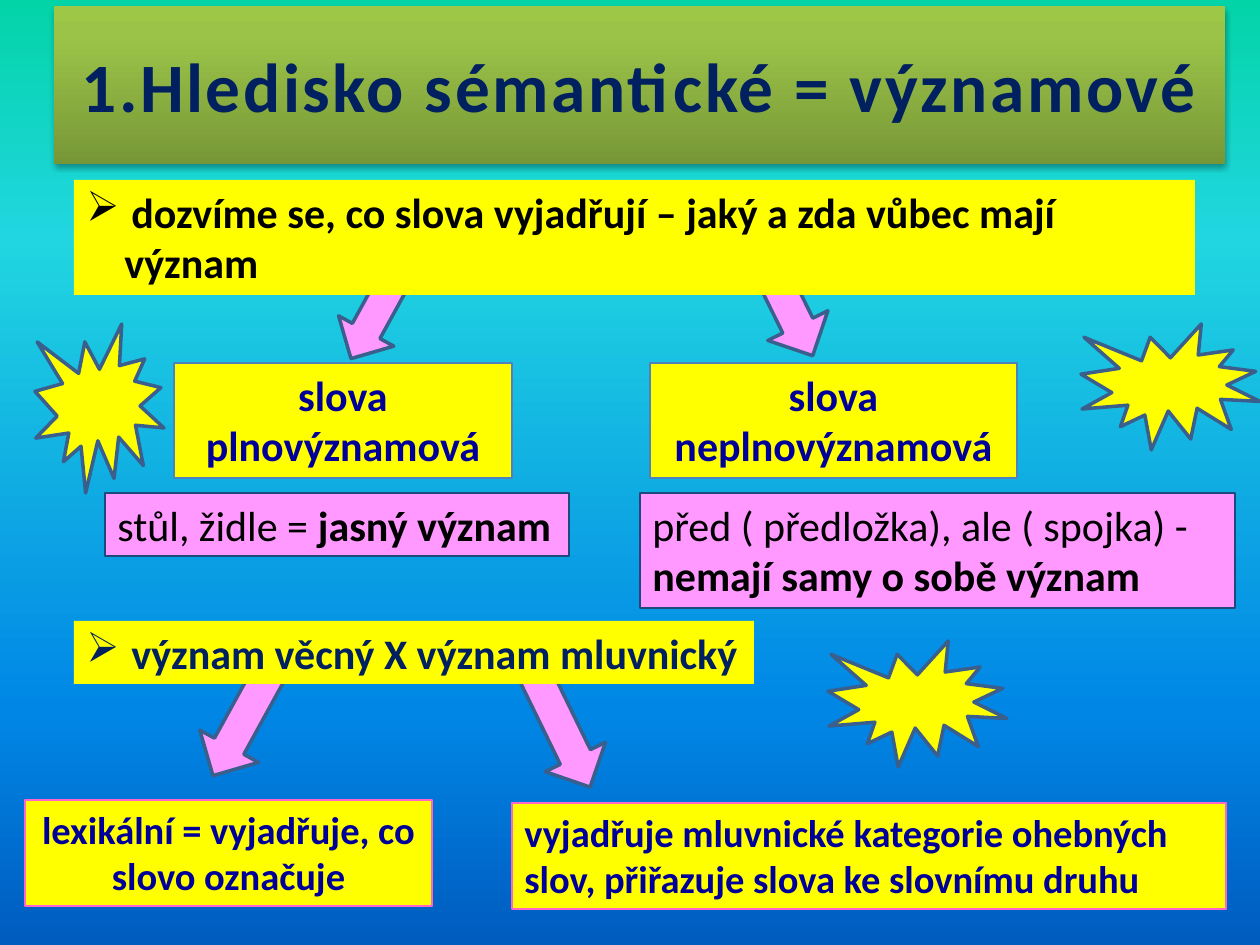
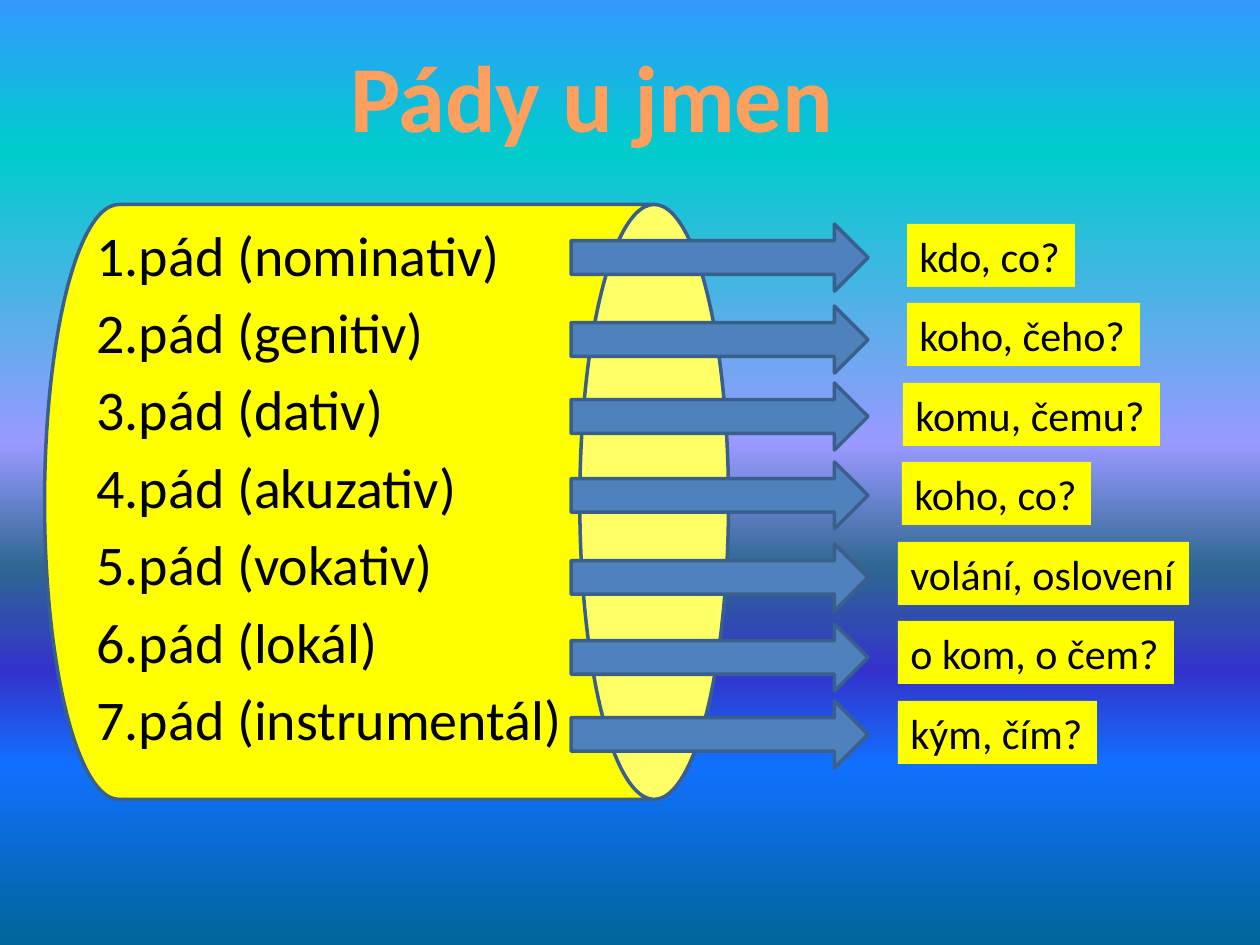
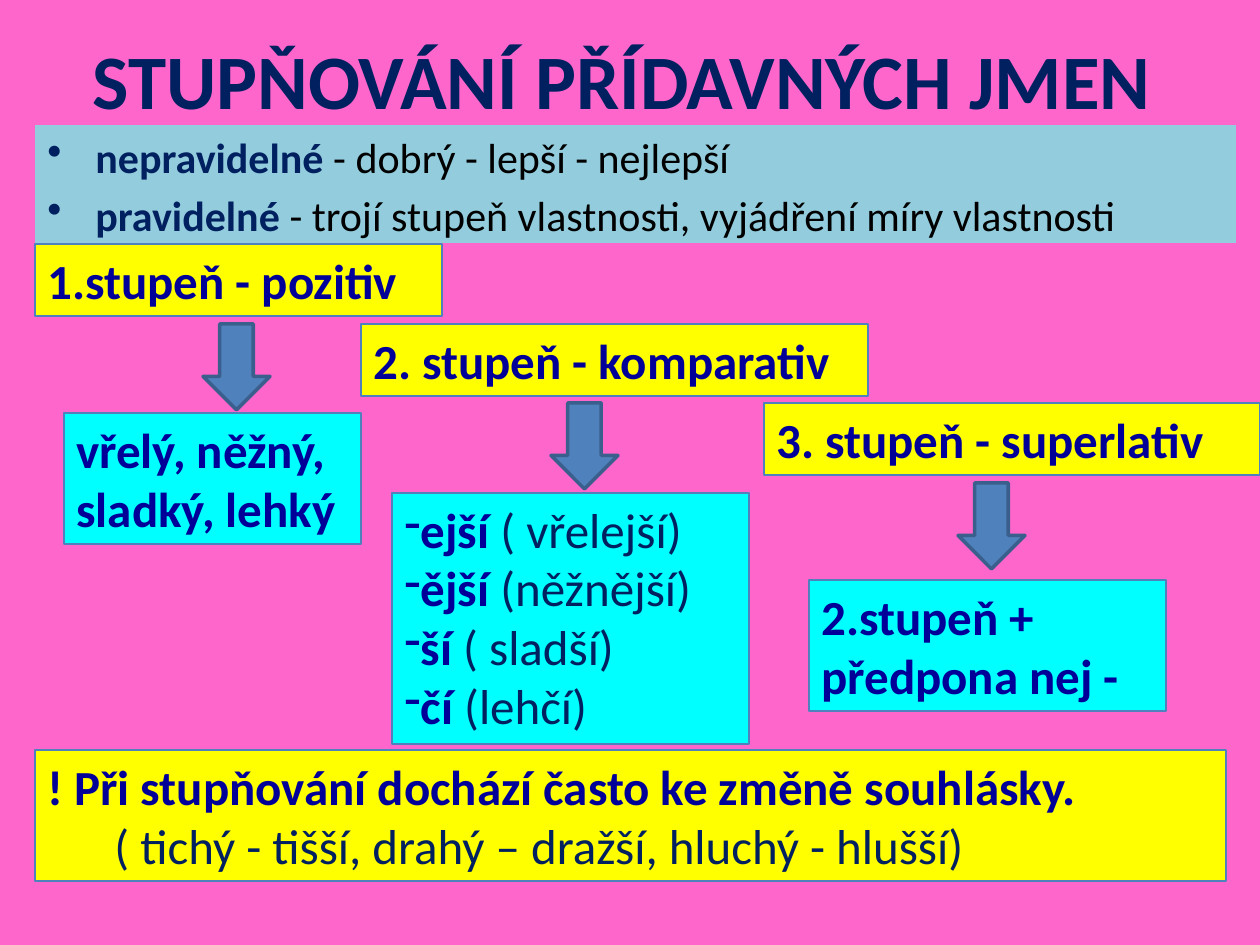
"""Build three slides on Czech word classes, cases and comparison of adjectives."""
from lxml import etree
from pptx import Presentation, util as u
from pptx.dml.color import RGBColor
from pptx.enum import shapes, text
from pptx.oxml.ns import qn

PX = u.Inches(1) / 126
YELLOW = RGBColor(0xFF, 0xFF, 0x00)
PINK = RGBColor(0xFF, 0x99, 0xFF)
HOT_PINK = RGBColor(0xFF, 0x66, 0xCC)
CYAN = RGBColor(0x00, 0xFF, 0xFF)
PALE_BLUE = RGBColor(0x93, 0xCD, 0xDD)
BLUE = RGBColor(0x4F, 0x81, 0xBD)
OUTLINE = RGBColor(0x3A, 0x5F, 0x8C)
SLATE = RGBColor(0x1F, 0x49, 0x7D)
NAVY = RGBColor(0x00, 0x20, 0x60)
INK = RGBColor(0x00, 0x00, 0x99)
BLACK = RGBColor(0x00, 0x00, 0x00)

SEA = [(0, "03D4A8"), (25, "21D6E0"), (75, "0087E6"), (100, "005CBF")]
DUSK = [(0, "3399FF"), (16, "00CCCC"), (47, "9999FF"), (60, "2E6792"),
        (71, "3333CC"), (81, "1170FF"), (100, "006699")]
OLIVE = [(0, "779737"), (80, "9BC348"), (100, "9DC746")]
ORANGE = [(0, "FFA367"), (25, "FF9F5D"), (50, "F38E3A"), (75, "FF9F5D"), (100, "FFA367")]

SHAPE = shapes.MSO_SHAPE
CENTER = text.PP_ALIGN.CENTER


def sub(parent, tag, **attrs):
    return etree.SubElement(parent, qn(tag), {k: str(v) for k, v in attrs.items()})


def paint(fill, color, element, angle=270):
    if isinstance(color, RGBColor):
        fill.solid()
        fill.fore_color.rgb = color
        return
    fill.gradient()
    fill.gradient_angle = angle
    stops = element.find(".//" + qn("a:gsLst"))
    for stop in list(stops):
        stops.remove(stop)
    for pos, rgb in color:
        sub(sub(stops, "a:gs", pos=pos * 1000), "a:srgbClr", val=rgb)


def write(tf, words, size=24, color=BLACK, bold=False, spacing=None, new=True,
          align=None, bullet=None, left=0, hang=0, before=0):
    p = tf.paragraphs[-1]
    if new:
        if p.runs:
            p = tf.add_paragraph()
        if align is not None:
            p.alignment = align
        if before:
            p.space_before = u.Pt(before)
        pPr = p._p.get_or_add_pPr()
        pPr.set("marL", str(round(left * PX)))
        pPr.set("indent", str(round(-hang * PX)))
        if bullet:
            sub(pPr, "a:buChar", char=bullet)
    r = p.add_run()
    r.text = words
    r.font.name, r.font.size, r.font.bold = "Calibri", u.Pt(size), bold
    paint(r.font.fill, color, r._r)
    if spacing:
        r._r.get_or_add_rPr().set("spc", str(round(spacing * 100)))


class Deck:
    """Hold the presentation, its scale and the current slide."""

    def __init__(self, width, height):
        self.prs = Presentation()
        self.prs.slide_width, self.prs.slide_height = self.emu(width, height)

    def emu(self, *lengths):
        return [u.Emu(round(n * PX)) for n in lengths]

    def slide(self, background):
        self.s = self.prs.slides.add_slide(self.prs.slide_layouts[6])
        paint(self.s.background.fill, background, self.s.element)

    def shape(self, kind, x, y, w, h, fill=YELLOW, turn=0):
        sp = self.s.shapes.add_shape(kind, *self.emu(x, y, w, h))
        sp.shadow.inherit = False
        sp.rotation = turn
        paint(sp.fill, fill, sp.element)
        sp.line.color.rgb, sp.line.width = OUTLINE, u.Pt(2)

    def frame(self, x, y, w, h, fill=None, line=None, wrap=True, grow=True):
        sp = self.s.shapes.add_textbox(*self.emu(x, y, w, h))
        tf = sp.text_frame
        tf.word_wrap = wrap
        tf.auto_size = text.MSO_AUTO_SIZE.SHAPE_TO_FIT_TEXT if grow else text.MSO_AUTO_SIZE.NONE
        if fill:
            paint(sp.fill, fill, sp.element, 90)
        if line:
            sp.line.color.rgb, sp.line.width = line, u.Pt(0.75)
        return sp

    def box(self, *place, **style):
        return self.frame(*place, **style).text_frame

    def title(self, words, x, y, w=1134, fill=None, **style):
        sp = self.frame(x, y, w, 158, fill, grow=False)
        sp.text_frame.vertical_anchor = text.MSO_ANCHOR.MIDDLE
        write(sp.text_frame, words, bold=True, align=CENTER, **style)
        if fill:
            effects = sub(sp.element.spPr, "a:effectLst")
            shadow = sub(effects, "a:outerShdw", blurRad=u.Pt(3.1), dist=u.Pt(1.8),
                         dir=5400000, rotWithShape=0)
            sub(sub(shadow, "a:srgbClr", val="000000"), "a:alpha", val=35000)


def meaning_slide(deck):
    deck.slide(SEA)
    for x, y, w, h, turn in [(527, 659, 67, 135, 334), (212, 649, 67, 135, 28.8),
                             (352, 232, 63, 135, 28.8), (748, 222, 67, 141, 333.7)]:
        deck.shape(SHAPE.DOWN_ARROW, x, y, w, h, PINK, turn)
    deck.title("1.Hledisko sémantické = významové", 54, 6, 1171, OLIVE,
               size=39.6, color=NAVY, spacing=1.5)

    for words, x, w in [("slova plnovýznamová", 174, 338), ("slova neplnovýznamová", 650, 367)]:
        write(deck.box(x, 363, w, 115, fill=YELLOW, line=BLUE), words,
              color=INK, bold=True, align=CENTER)

    arrow_item = dict(bold=True, bullet="➢", left=45, hang=45)
    tf = deck.box(74, 180, 1121, 115, fill=YELLOW)
    write(tf, "dozvíme se, co slova vyjadřují – jaký a zda vůbec mají", **arrow_item)
    write(tf, "význam", bold=True, left=38)

    tf = deck.box(105, 493, 464, 63, fill=PINK, line=SLATE, wrap=False)
    write(tf, "stůl, židle = ")
    write(tf, "jasný význam", bold=True, new=False)
    tf = deck.box(640, 493, 595, 115, fill=PINK, line=SLATE)
    write(tf, "před ( předložka), ale ( spojka) - ")
    write(tf, "nemají samy o sobě význam", bold=True, new=False)

    write(deck.box(74, 621, 680, 63, fill=YELLOW, wrap=False),
          "význam věcný X význam mluvnický", color=NAVY, **arrow_item)

    for words, x, y, w, align in [
            ("lexikální = vyjadřuje, co slovo označuje", 25, 800, 407, CENTER),
            ("vyjadřuje mluvnické kategorie ohebných slov, přiřazuje slova ke slovnímu druhu",
             512, 803, 714, None)]:
        write(deck.box(x, y, w, 106, fill=YELLOW, line=HOT_PINK), words,
              size=22, color=INK, bold=True, align=align)
    for place in [(1081, 324, 179, 126), (828, 641, 179, 126), (35, 324, 129, 169)]:
        deck.shape(SHAPE.EXPLOSION1, *place)


def cases_slide(deck):
    deck.slide(DUSK)
    deck.shape(SHAPE.CAN, 89, 160, 595, 684, turn=90)
    deck.title("Pády u jmen", 25, 16, size=54, color=ORANGE)
    cases = [("nominativ", "kdo, co?", 907, 168, 224),
             ("genitiv", "koho, čeho?", 907, 233, 306),
             ("dativ", "komu, čemu?", 903, 257, 383),
             ("akuzativ", "koho, co?", 902, 189, 462),
             ("vokativ", "volání, oslovení", 898, 291, 544),
             ("lokál", "o kom, o čem?", 898, 276, 624),
             ("instrumentál", "kým, čím?", 898, 199, 701)]
    names = deck.box(84, 214, 1134, 624, grow=False)
    for i, (name, question, x, w, arrow_y) in enumerate(cases):
        write(names, f"{i + 1}.pád ({name})", size=32, left=48, hang=48, before=5.8)
        deck.shape(SHAPE.RIGHT_ARROW, 571, arrow_y, 297, 67, BLUE)
        write(deck.box(x, 224 + i * 159 // 2, w, 63, fill=YELLOW, wrap=False), question)


def comparison_slide(deck):
    deck.slide(HOT_PINK)
    deck.title("STUPŇOVÁNÍ PŘÍDAVNÝCH JMEN ", 64, 0, size=44, color=NAVY)
    tf = deck.box(35, 125, 1201, 118, fill=PALE_BLUE, grow=False)
    for kind, detail in [("nepravidelné ", "- dobrý - lepší - nejlepší"),
                         ("pravidelné ", "- trojí stupeň vlastnosti, vyjádření míry vlastnosti")]:
        write(tf, kind, color=NAVY, bold=True, bullet="•", left=48, hang=48, before=4.4)
        write(tf, detail, new=False)

    strong = dict(size=28, color=INK, bold=True)
    plain = dict(size=28, color=NAVY)
    for words, x, y, w, h, fill in [
            ("1.stupeň - pozitiv", 35, 244, 407, 72, YELLOW),
            ("2. stupeň - komparativ", 361, 324, 507, 72, YELLOW),
            ("3. stupeň - superlativ", 764, 403, 496, 72, YELLOW),
            ("vřelý, něžný, sladký, lehký", 64, 413, 297, 131, CYAN),
            ("2.stupeň + předpona nej -", 809, 580, 357, 131, CYAN)]:
        write(deck.box(x, y, w, h, fill=fill, line=BLUE), words, **strong)

    tf = deck.box(392, 493, 357, 251, fill=CYAN, line=BLUE)
    for suffix, example in [("ejší ", "( vřelejší)"), ("ější ", "(něžnější)"),
                            ("ší ", "( sladší)"), ("čí ", "(lehčí)")]:
        write(tf, suffix, bullet="-", left=16, hang=16, **strong)
        write(tf, example, new=False, **plain)

    tf = deck.box(35, 750, 1191, 131, fill=YELLOW, line=BLUE)
    write(tf, "! Při stupňování dochází často ke změně souhlásky.", **strong)
    write(tf, "( tichý - tišší, drahý – dražší, hluchý - hlušší)", left=67, **plain)
    for x, y in [(203, 324), (551, 403), (958, 483)]:
        deck.shape(SHAPE.DOWN_ARROW, x, y, 67, 86, BLUE)


def main():
    deck = Deck(1260, 945)
    meaning_slide(deck)
    cases_slide(deck)
    comparison_slide(deck)
    deck.prs.save("out.pptx")


if __name__ == "__main__":
    main()
